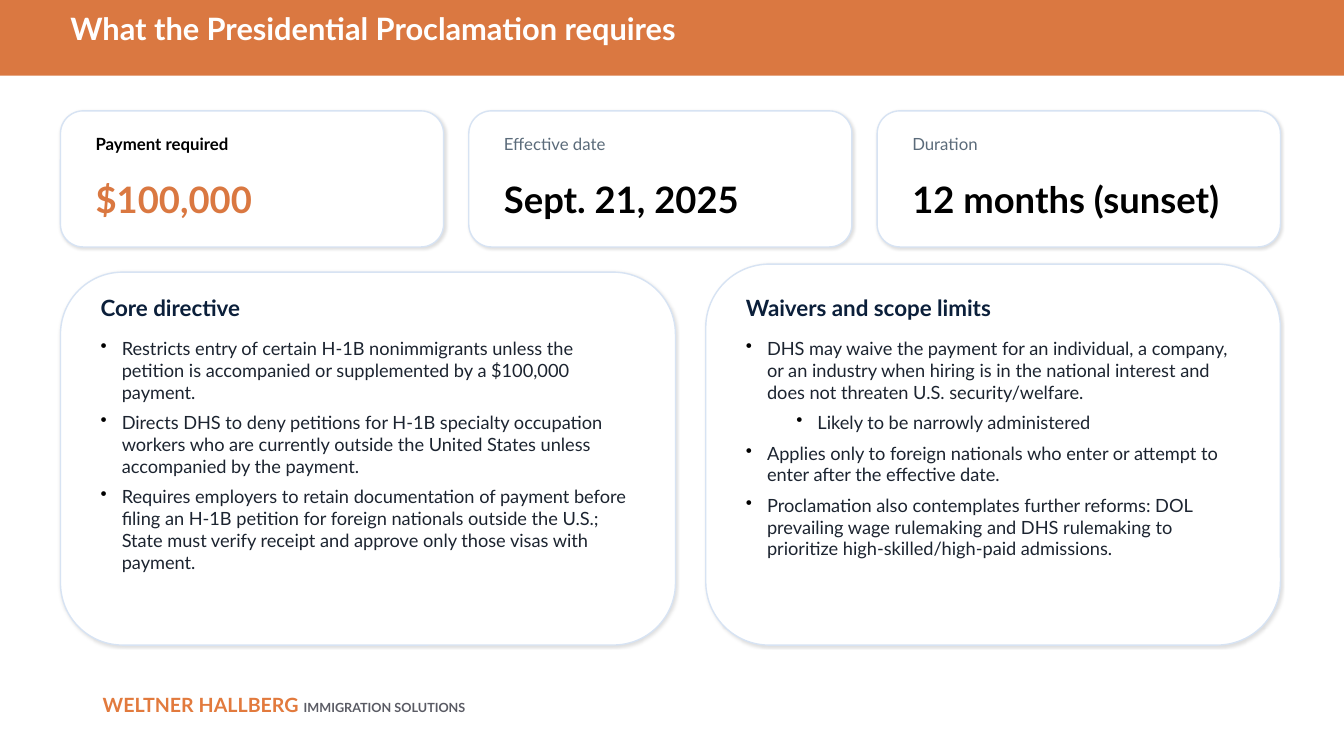
"""Build the slide that sums up what the proclamation requires."""
from dataclasses import dataclass

from lxml import etree
from pptx import Presentation
from pptx.dml.color import RGBColor
from pptx.enum.shapes import MSO_SHAPE
from pptx.enum.text import MSO_ANCHOR
from pptx.oxml.ns import qn
from pptx.util import Inches, Pt

RECT = MSO_SHAPE.RECTANGLE
ROUNDED = MSO_SHAPE.ROUNDED_RECTANGLE
TOP = MSO_ANCHOR.TOP
MIDDLE = MSO_ANCHOR.MIDDLE

FONT = "Lato"
ORANGE = "DA7841"
BLACK = "000000"
WHITE = "FFFFFF"
GREY = "5B6B7A"
NAVY = "0B1F3A"
INK = "1C2430"
BORDER = "D7E3F3"
EMU_PER_PT = 12700

FACT_TOP, FACT_HEIGHT = 1.1, 1.35
FACT_LEFT, FACT_PITCH = 0.6, 4.05
FACT_PAD, PANEL_PAD = 0.25, 0.3
PANEL_BOTTOM = 6.4


@dataclass
class Fact:
    label: str
    value: str
    width: float = 3.8
    label_color: str = GREY
    label_bold: bool = False
    value_color: str = BLACK


@dataclass
class Bullet:
    text: str
    level: int = 0


@dataclass
class Panel:
    left: float
    top: float
    width: float
    heading: str
    bullets: list[Bullet]


FACTS = [
    Fact("Payment required", "$100,000", label_color=BLACK, label_bold=True, value_color=ORANGE),
    Fact("Effective date", "Sept. 21, 2025"),
    Fact("Duration", "12 months (sunset)", width=4),
]

PANELS = [
    Panel(0.6, 2.7, 6.1, "Core directive", [
        Bullet("Restricts entry of certain H-1B nonimmigrants unless the petition is "
               "accompanied or supplemented by a $100,000 payment."),
        Bullet("Directs DHS to deny petitions for H-1B specialty occupation workers who are "
               "currently outside the United States unless accompanied by the payment."),
        Bullet("Requires employers to retain documentation of payment before filing an H-1B "
               "petition for foreign nationals outside the U.S.; State must verify receipt "
               "and approve only those visas with payment."),
    ]),
    Panel(7, 2.62, 5.7, "Waivers and scope limits", [
        Bullet("DHS may waive the payment for an individual, a company, or an industry when "
               "hiring is in the national interest and does not threaten U.S. security/welfare."),
        Bullet("Likely to be narrowly administered", level=1),
        Bullet("Applies only to foreign nationals who enter or attempt to enter after the "
               "effective date."),
        Bullet("Proclamation also contemplates further reforms: DOL prevailing wage rulemaking "
               "and DHS rulemaking to prioritize high-skilled/high-paid admissions."),
    ]),
]


def rgb(color: str) -> RGBColor:
    return RGBColor.from_string(color)


def add_run(p, text: str, *, size: float, color: str, bold: bool = False) -> None:
    r = p.add_run()
    r.text = text
    r.font.name = FONT
    r.font.size = Pt(size)
    r.font.bold = bold
    r.font.color.rgb = rgb(color)


def add_box(s, left: float, top: float, width: float, height: float, anchor=MIDDLE):
    tf = s.shapes.add_textbox(Inches(left), Inches(top), Inches(width), Inches(height)).text_frame
    tf.word_wrap = True
    tf.vertical_anchor = anchor
    return tf


def add_line(s, text: str, left: float, top: float, width: float, height: float, **style) -> None:
    add_run(add_box(s, left, top, width, height).paragraphs[0], text, **style)


def add_filled(s, kind, left: float, top: float, width: float, height: float, fill: str):
    sp = s.shapes.add_shape(kind, Inches(left), Inches(top), Inches(width), Inches(height))
    sp.shadow.inherit = False
    sp.fill.solid()
    sp.fill.fore_color.rgb = rgb(fill)
    sp.line.fill.background()
    return sp


def add_card(s, left: float, top: float, width: float, height: float) -> None:
    sp = add_filled(s, ROUNDED, left, top, width, height, WHITE)
    sp.line.color.rgb = rgb(BORDER)
    sp.line.width = Pt(1)
    effects = sp.element.spPr.find(qn("a:effectLst"))
    shadow = etree.SubElement(effects, qn("a:outerShdw"), blurRad=str(2 * EMU_PER_PT),
                              dist=str(EMU_PER_PT), dir=str(45 * 60000), rotWithShape="0")
    color = etree.SubElement(shadow, qn("a:srgbClr"), val=BLACK)
    etree.SubElement(color, qn("a:alpha"), val="12000")


def set_bullet(p, level: int) -> None:
    p.level = level
    p.space_after = Pt(6)
    pPr = p._p.get_or_add_pPr()
    pPr.set("marL", str(Inches(0.21 + 0.5 * level)))
    pPr.set("indent", str(Inches(-0.21)))
    etree.SubElement(etree.SubElement(pPr, qn("a:buClr")), qn("a:srgbClr"), val=BLACK)
    etree.SubElement(pPr, qn("a:buChar"), char="•")


def add_fact(s, fact: Fact, left: float) -> None:
    add_card(s, left, FACT_TOP, fact.width, FACT_HEIGHT)
    text_left, text_width = left + FACT_PAD, fact.width - 2 * FACT_PAD
    add_line(s, fact.label, text_left, 1.28, text_width, 0.3,
             size=12, color=fact.label_color, bold=fact.label_bold)
    add_line(s, fact.value, text_left, 1.62, text_width, 0.7,
             size=26, color=fact.value_color, bold=True)


def add_panel(s, panel: Panel) -> None:
    add_card(s, panel.left, panel.top, panel.width, PANEL_BOTTOM - panel.top)
    text_left = panel.left + PANEL_PAD
    add_line(s, panel.heading, text_left, 2.9, panel.width - 0.5, 0.3,
             size=16, color=NAVY, bold=True)
    tf = add_box(s, text_left, 3.3, panel.width - 2 * PANEL_PAD, 2.3, TOP)
    for i, bullet in enumerate(panel.bullets):
        p = tf.add_paragraph() if i else tf.paragraphs[0]
        set_bullet(p, bullet.level)
        add_run(p, bullet.text, size=13, color=INK)


def main() -> None:
    prs = Presentation()
    prs.slide_width, prs.slide_height = Inches(13.33), Inches(7.5)
    s = prs.slides.add_slide(prs.slide_layouts[6])

    p = add_box(s, 0.92, 6.83, 6.6, 0.64, TOP).paragraphs[0]
    add_run(p, "WELTNER HALLBERG ", size=14, color="E27A3D", bold=True)
    add_run(p, "IMMIGRATION SOLUTIONS", size=9, color="5A5B64", bold=True)

    add_filled(s, RECT, 0, 0, 13.33, 0.75, ORANGE)
    add_line(s, "What the Presidential Proclamation requires", 0.6, 0.14, 12.2, 0.28,
             size=22, color=WHITE, bold=True)

    for i, fact in enumerate(FACTS):
        add_fact(s, fact, FACT_LEFT + i * FACT_PITCH)
    for panel in PANELS:
        add_panel(s, panel)

    prs.save("out.pptx")


if __name__ == "__main__":
    main()
